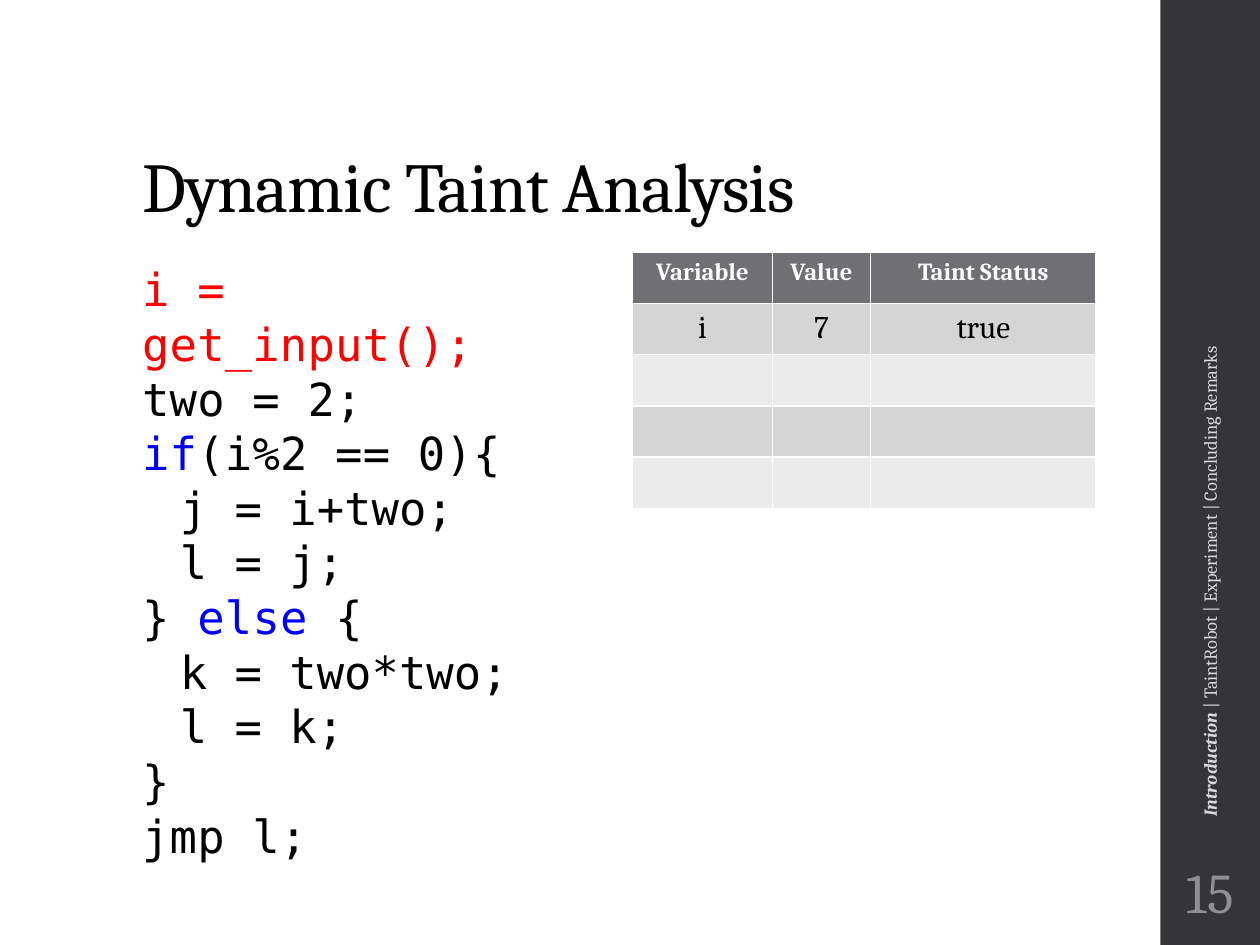
from pptx import Presentation
from pptx.dml.color import RGBColor
from pptx.enum.shapes import MSO_SHAPE
from pptx.enum.text import MSO_ANCHOR, PP_ALIGN
from pptx.util import Inches, Pt

WIDE, HIGH = Inches(10), Inches(7.5)
SERIF, MONO = "Cambria", "DejaVu Sans Mono"
WHITE = RGBColor(0xFF, 0xFF, 0xFF)
BLACK = RGBColor(0, 0, 0)
RED = RGBColor(0xFF, 0, 0)
BLUE = RGBColor(0, 0, 0xFF)
DARK = RGBColor(0x35, 0x35, 0x37)
HEAD = RGBColor(0x6F, 0x6F, 0x74)
BANDS = RGBColor(0xD5, 0xD5, 0xD6), RGBColor(0xEB, 0xEB, 0xEB)
PALE = RGBColor(0xD9, 0xD9, 0xDB)
GREY = RGBColor(0x8E, 0x8E, 0x94)

# Each line of code: indent level, then its (text, colour) parts
CODE = [
    (0, [("i = get_input();", RED)]),
    (0, [("two = 2;", BLACK)]),
    (0, [("if", BLUE), ("(i%2 == 0){", BLACK)]),
    (1, [("j = i+two;", BLACK)]),
    (1, [("l = j;", BLACK)]),
    (0, [("} ", BLACK), ("else", BLUE), (" {", BLACK)]),
    (1, [("k = two*two;", BLACK)]),
    (1, [("l = k;", BLACK)]),
    (0, [("}", BLACK)]),
    (0, [("jmp l;", BLACK)]),
]
ROWS = [("Variable", "Value", "Taint Status"), ("i", "7", "true")]
COLS = 0.111, 0.078, 0.179
COUNT = 5


def area(x, y, w, h):
    """Turn shares of the slide into left, top, width and height."""
    return int(x * WIDE), int(y * HIGH), int(w * WIDE), int(h * HIGH)


def style(para, face, size, color, space=0):
    font = para.font
    font.name, font.size = face, Pt(size)
    font.color.rgb = color
    if space:
        font._element.set("spc", str(space))


def add_box(slide, box, anchor=MSO_ANCHOR.TOP):
    shape = slide.shapes.add_textbox(*area(*box))
    frame = shape.text_frame
    frame.word_wrap = True
    frame.vertical_anchor = anchor
    return shape, frame.paragraphs[0]


def add_band(slide):
    band = slide.shapes.add_shape(MSO_SHAPE.RECTANGLE, *area(0.921, 0, 0.079, 1))
    band.shadow.inherit = False
    band.fill.solid()
    band.fill.fore_color.rgb = DARK
    band.line.fill.background()


def add_title(slide):
    para = add_box(slide, (0.103, 0.053, 0.795, 0.194), MSO_ANCHOR.BOTTOM)[1]
    para.text = "Dynamic Taint Analysis"
    para.line_spacing = 0.9
    style(para, SERIF, 40, BLACK, -50)


def add_code(slide):
    shape, para = add_box(slide, (0.103, 0.27, 0.367, 0.635))
    for row, (level, parts) in enumerate(CODE):
        if row:
            para = shape.text_frame.add_paragraph()
        style(para, MONO, 26, BLACK, 0 if level else 10)
        para.line_spacing = Pt(31.2)
        if level:
            para._p.get_or_add_pPr().set("marL", str(Inches(0.3)))
        for text, color in parts:
            run = para.add_run()
            run.text = text
            run.font.color.rgb = color


def add_grid(slide):
    box = area(0.502, 0.267, sum(COLS), 0.271)
    table = slide.shapes.add_table(COUNT, len(COLS), *box).table
    for col, share in zip(table.columns, COLS):
        col.width = int(share * WIDE)
    for row in range(COUNT):
        for col in range(len(COLS)):
            cell = table.cell(row, col)
            cell.fill.solid()
            cell.fill.fore_color.rgb = BANDS[(row - 1) % 2] if row else HEAD
            if row < len(ROWS):
                para = cell.text_frame.paragraphs[0]
                para.text = ROWS[row][col]
                para.alignment = PP_ALIGN.CENTER
                style(para, SERIF, 18 if row else 14, BLACK if row else WHITE)
                para.font.bold = row == 0


def add_trail(slide):
    """Section names running up the side band."""
    shape, para = add_box(slide, (0.651, 0.445, 0.618, 0.04), MSO_ANCHOR.MIDDLE)
    shape.rotation = 270
    style(para, SERIF, 10.5, PALE)
    now, rest = para.add_run(), para.add_run()
    now.text = "Introduction"
    now.font.bold = now.font.italic = True
    rest.text = " | TaintRobot | Experiment | Concluding Remarks"


def add_page(slide):
    shape, para = add_box(slide, (0.923, 0.9, 0.075, 0.087), MSO_ANCHOR.MIDDLE)
    frame = shape.text_frame
    frame.margin_left = frame.margin_right = Inches(0.03)
    para.text = "15"
    para.alignment = PP_ALIGN.CENTER
    style(para, SERIF, 32, GREY)


def main():
    deck = Presentation()
    deck.slide_width, deck.slide_height = WIDE, HIGH
    slide = deck.slides.add_slide(deck.slide_layouts[6])
    for add in (add_band, add_title, add_code, add_grid, add_trail, add_page):
        add(slide)
    deck.save("out.pptx")


if __name__ == "__main__":
    main()
